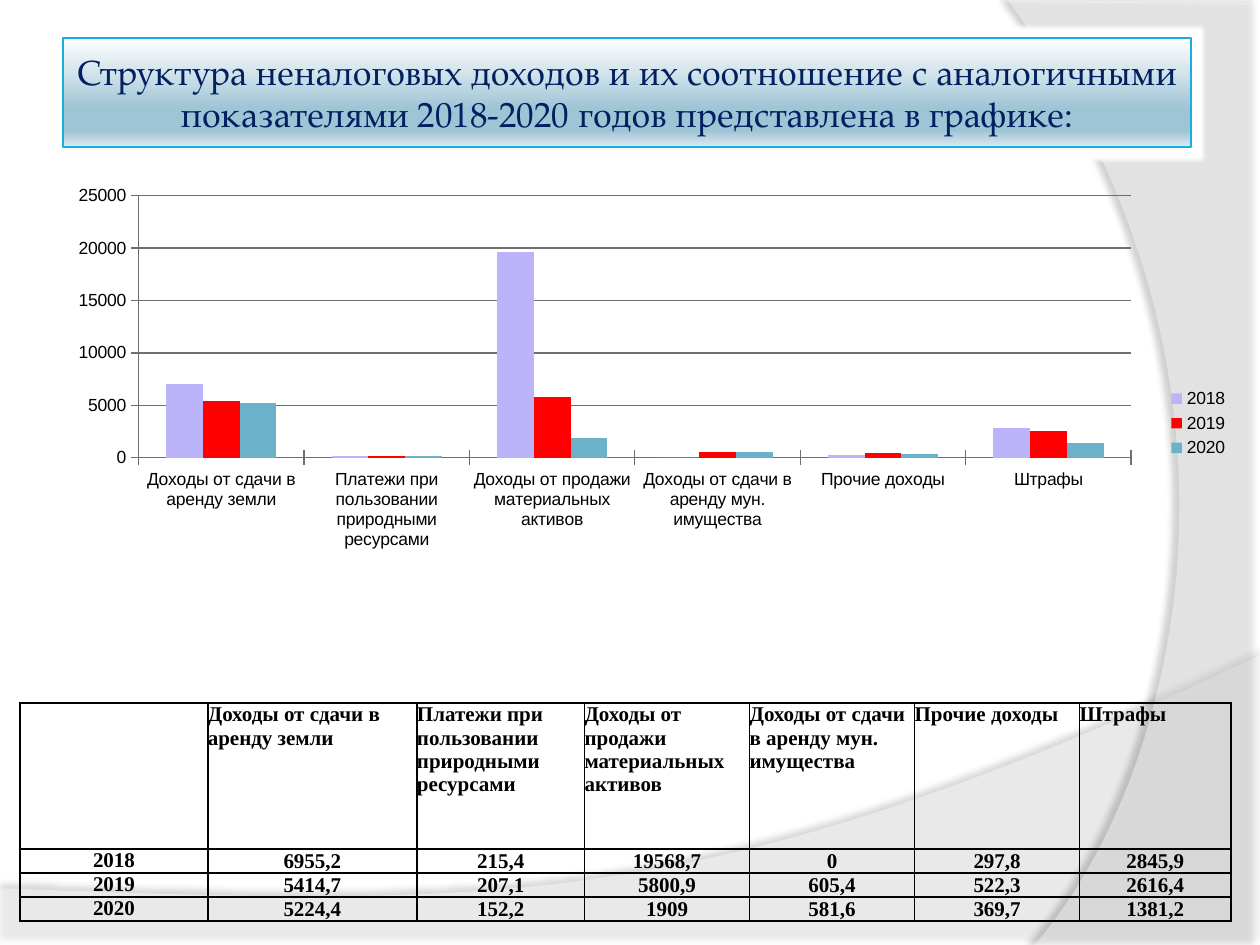
from lxml.etree import SubElement
from pptx import Presentation
from pptx.chart.data import CategoryChartData
from pptx.dml.color import RGBColor
from pptx.enum.chart import XL_CHART_TYPE, XL_LEGEND_POSITION, XL_TICK_MARK
from pptx.enum.shapes import MSO_SHAPE
from pptx.enum.text import MSO_ANCHOR, PP_ALIGN
from pptx.oxml import parse_xml
from pptx.oxml.ns import nsdecls, qn
from pptx.util import Inches, Pt

# Content
TITLE = ("Структура неналоговых доходов и их соотношение с аналогичными "
         "показателями 2018-2020 годов представлена в графике:")
CATEGORIES = ["Доходы от сдачи в аренду земли", "Платежи при пользовании природными ресурсами",
              "Доходы от продажи материальных активов", "Доходы от сдачи в аренду мун. имущества",
              "Прочие доходы", "Штрафы"]
INCOME = {
    "2018": [6955.2, 215.4, 19568.7, 0, 297.8, 2845.9],
    "2019": [5414.7, 207.1, 5800.9, 605.4, 522.3, 2616.4],
    "2020": [5224.4, 152.2, 1909, 581.6, 369.7, 1381.2],
}

THEME = {
    "title_font": "TeX Gyre Pagella", "chart_font": "Arial", "table_font": "Times New Roman",
    "title_size": Pt(20), "chart_size": Pt(10), "table_size": Pt(12),
    "title": "002060", "title_line": "17AEE0", "ink": "000000", "grid": "6F6F6F",
    "title_fill": [(0, "FFFFFF"), (30, "D5E5EC"), (65, "9EC4D6"), (85, "9EC4D6"), (100, "E0EBF0")],
    "series": ["BBB4FB", "FF0000", "6BB1C9"], "wave": "FFFFFF", "glow": "FFFFFF",
}

# Layout in inches
TITLE_BOX = (0.5, 0.3, 8.95, 0.87)
CHART_BOX = (0.16, 1.25, 9.69, 4.22)
TABLE_BOX = (0.16, 5.58, 9.61, 1.73)
COLUMNS = [1.49, 1.66, 1.33, 1.31, 1.31, 1.31, 1.2]
ROWS = [1.16, 0.19, 0.19, 0.19]
PLOT_AREA = {"x": 0.097, "y": 0.072, "w": 0.813, "h": 0.493}

# Waves: straight corners, then one Bezier edge; shadow as opacity, blur, distance, angle
WAVES = [
    {"corners": [(0, 7.05), (0, 7.5), (10, 7.5)],
     "edge": [(10, 5.2), (5.59, 7.29), (3.91, 7.19), (0, 7.05)],
     "opacity": 45, "shadow": (35, 4, 3.5, 270)},
    {"corners": [(10, 0.02), (10, 7.5)],
     "edge": [(8.21, 7.5), (9.35, 6.19), (10.18, 3), (8, 0)],
     "opacity": 40, "shadow": (45, 4, 4, 180)},
]


def color(name):
    return RGBColor.from_string(name)


def bezier(points, steps=40):
    for step in range(steps + 1):
        t = step / steps
        weights = ((1 - t) ** 3, 3 * t * (1 - t) ** 2, 3 * t * t * (1 - t), t ** 3)
        yield tuple(sum(w * p[axis] for w, p in zip(weights, points)) for axis in (0, 1))


def style_font(font, family, size, ink, bold=False):
    font.name, font.size, font.bold = family, size, bold
    font.color.rgb = color(ink)


def add_wave(page, wave):
    outline = [(Inches(x), Inches(y)) for x, y in wave["corners"] + list(bezier(wave["edge"]))]
    builder = page.shapes.build_freeform(*outline[0])
    builder.add_line_segments(outline[1:], close=True)
    shape = builder.convert_to_shape()
    shape.fill.solid()
    shape.fill.fore_color.rgb = color(THEME["wave"])
    shape.line.fill.background()
    properties = shape.element.spPr
    fill = properties.find(qn("a:solidFill"))[0]
    SubElement(fill, qn("a:alpha"), val=str(wave["opacity"] * 1000))
    opacity, blur, distance, angle = wave["shadow"]
    properties.append(parse_xml(
        f'<a:effectLst {nsdecls("a")}><a:outerShdw blurRad="{Pt(blur)}" dist="{Pt(distance)}" '
        f'dir="{angle * 60000}" algn="ctr" rotWithShape="0"><a:srgbClr val="000000">'
        f'<a:alpha val="{opacity * 1000}"/></a:srgbClr></a:outerShdw></a:effectLst>'))


def add_title(page):
    box = page.shapes.add_shape(MSO_SHAPE.RECTANGLE, *map(Inches, TITLE_BOX))
    box.shadow.inherit = False
    box.fill.gradient()
    box.fill.gradient_angle = 270
    properties = box.element.spPr
    stops = properties.find(qn("a:gradFill")).find(qn("a:gsLst"))
    for stop in list(stops):
        stops.remove(stop)
    for position, shade in THEME["title_fill"]:
        stop = SubElement(stops, qn("a:gs"), pos=str(position * 1000))
        SubElement(stop, qn("a:srgbClr"), val=shade)
    box.line.color.rgb = color(THEME["title_line"])
    box.line.width = Pt(1)
    glow = SubElement(properties.find(qn("a:effectLst")), qn("a:glow"), rad=str(Pt(4)))
    SubElement(glow, qn("a:srgbClr"), val=THEME["glow"])
    frame = box.text_frame
    frame.word_wrap = True
    frame.vertical_anchor = MSO_ANCHOR.MIDDLE
    frame.margin_left = frame.margin_right = frame.margin_top = frame.margin_bottom = Inches(0.05)
    para = frame.paragraphs[0]
    para.text, para.alignment = TITLE, PP_ALIGN.CENTER
    style_font(para.font, THEME["title_font"], THEME["title_size"], THEME["title"])


def add_income_chart(page):
    data = CategoryChartData()
    data.categories = CATEGORIES
    for year, values in INCOME.items():
        data.add_series(year, [round(value, -2) for value in values])
    chart = page.shapes.add_chart(
        XL_CHART_TYPE.COLUMN_CLUSTERED, *map(Inches, CHART_BOX), data).chart
    style_font(chart.font, THEME["chart_font"], THEME["chart_size"], THEME["ink"])
    chart.has_title = False
    chart.has_legend = True
    chart.legend.position = XL_LEGEND_POSITION.RIGHT
    chart.legend.include_in_layout = False
    plot = chart.plots[0]
    plot.gap_width, plot.overlap, plot.vary_by_categories = 150, 0, False
    for series, shade in zip(plot.series, THEME["series"]):
        series.format.fill.solid()
        series.format.fill.fore_color.rgb = color(shade)
    values = chart.value_axis
    values.minimum_scale, values.maximum_scale, values.major_unit = 0, 25000, 5000
    values.has_major_gridlines = True
    for line in (values.format.line, chart.category_axis.format.line,
                 values.major_gridlines.format.line):
        line.color.rgb = color(THEME["grid"])
        line.width = Pt(0.75)
    for axis in (values, chart.category_axis):
        axis.major_tick_mark = XL_TICK_MARK.CROSS

    # Fixed inner plot area
    area = chart.element.find(qn("c:chart")).find(qn("c:plotArea"))
    for old in area.findall(qn("c:layout")):
        area.remove(old)
    sizes = "".join(f'<c:{key} val="{share}"/>' for key, share in PLOT_AREA.items())
    area.insert(0, parse_xml(
        f'<c:layout {nsdecls("c")}><c:manualLayout><c:layoutTarget val="inner"/>'
        f'<c:xMode val="edge"/><c:yMode val="edge"/>{sizes}</c:manualLayout></c:layout>'))


def style_cell(cell):
    cell.margin_left = cell.margin_right = cell.margin_top = cell.margin_bottom = 0
    properties = cell._tc.get_or_add_tcPr()
    for side in ("lnL", "lnR", "lnT", "lnB"):
        border = SubElement(properties, qn(f"a:{side}"), w=str(Pt(1)))
        SubElement(SubElement(border, qn("a:solidFill")), qn("a:srgbClr"), val=THEME["ink"])
    cell.fill.background()


def add_income_table(page):
    lines = [["", *CATEGORIES]]
    for year, values in INCOME.items():
        lines.append([year, *(f"{value:g}".replace(".", ",") for value in values)])
    table = page.shapes.add_table(len(ROWS), len(COLUMNS), *map(Inches, TABLE_BOX)).table
    for column, width in zip(table.columns, COLUMNS):
        column.width = Inches(width)
    for row, height in zip(table.rows, ROWS):
        row.height = Inches(height)
    for r, line in enumerate(lines):
        for c, text in enumerate(line):
            cell = table.cell(r, c)
            style_cell(cell)
            para = cell.text_frame.paragraphs[0]
            para.text = text
            if r:
                para.alignment = PP_ALIGN.CENTER
                cell.vertical_anchor = MSO_ANCHOR.BOTTOM if c else MSO_ANCHOR.TOP
            style_font(para.font, THEME["table_font"], THEME["table_size"], THEME["ink"], True)


def main():
    deck = Presentation()
    deck.slide_width, deck.slide_height = Inches(10), Inches(7.5)
    page = deck.slides.add_slide(deck.slide_layouts[6])
    for wave in WAVES:
        add_wave(page, wave)
    add_title(page)
    add_income_chart(page)
    add_income_table(page)
    deck.save("out.pptx")


if __name__ == "__main__":
    main()
